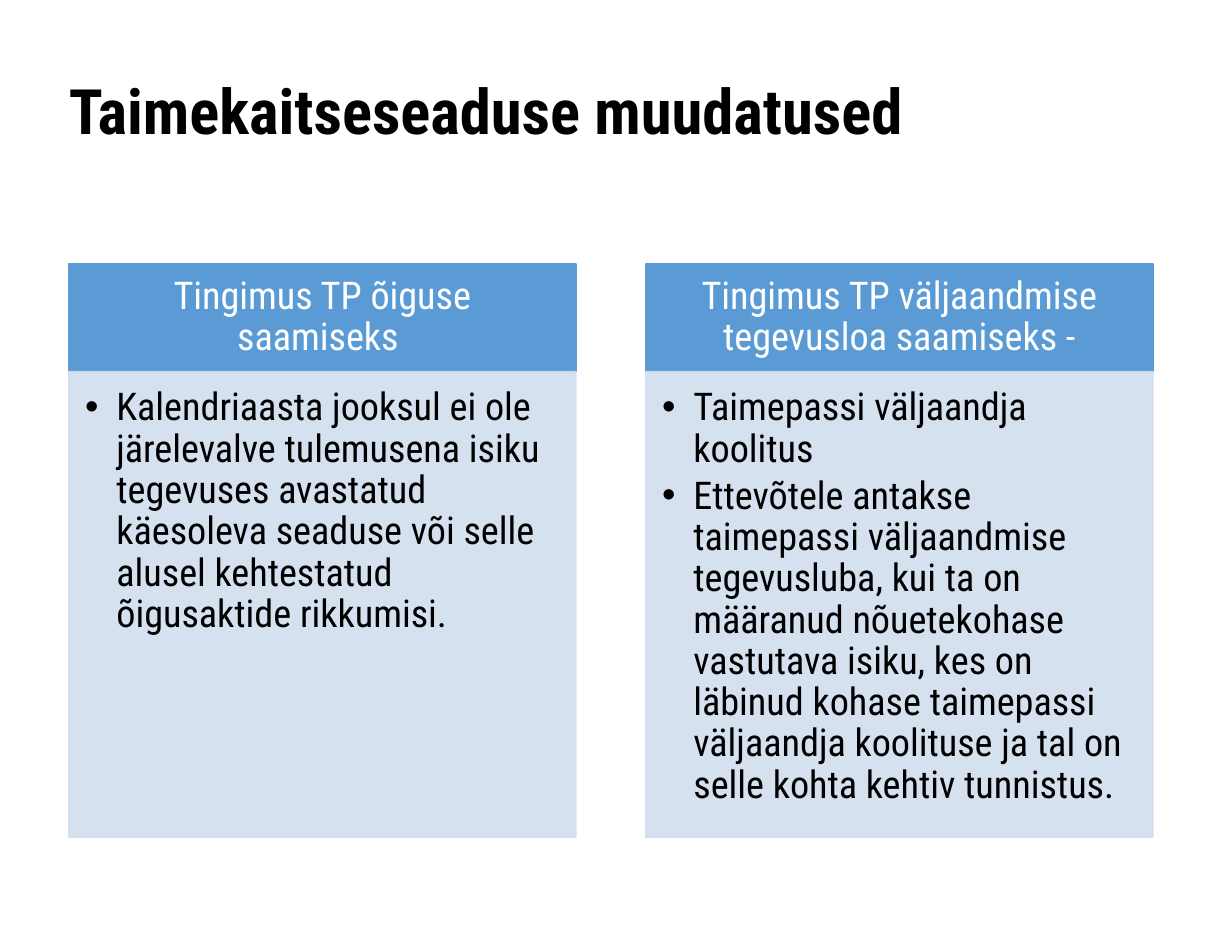
"""Builds a slide with two headed columns on plant protection law changes."""
import pptx
import pptx.util
import pptx.dml.color
import pptx.enum.shapes
import pptx.enum.text
import pptx.oxml
import pptx.oxml.ns
import lxml.etree

Inches, Pt = pptx.util.Inches, pptx.util.Pt
Align = pptx.enum.text.PP_ALIGN
Anchor = pptx.enum.text.MSO_ANCHOR
qn = pptx.oxml.ns.qn

TITLE = "Taimekaitseseaduse muudatused"
COLUMNS = [
    ("Tingimus TP õiguse saamiseks ", [
        "Kalendriaasta jooksul ei ole järelevalve tulemusena isiku tegevuses "
        "avastatud käesoleva seaduse või selle alusel kehtestatud õigusaktide "
        "rikkumisi."]),
    ("Tingimus TP väljaandmise tegevusloa saamiseks -", [
        "Taimepassi väljaandja koolitus",
        "Ettevõtele antakse taimepassi väljaandmise tegevusluba, kui ta on "
        "määranud nõuetekohase vastutava isiku, kes on läbinud kohase "
        "taimepassi väljaandja koolituse ja tal on selle kohta kehtiv "
        "tunnistus."]),
]
FONT = "Roboto Condensed"
PAGE = (25 / 2.54, 19 / 2.54)
LEFT, WIDTH, STEP = 0.55, 4.05, 4.61
HEAD = {"top": 2.11, "high": 0.86, "fill": "5B9BD5", "alpha": 100}
BODY = {"top": 2.97, "high": 3.72, "fill": "D2DEEF", "alpha": 90}
SIDES = ("margin_left", "margin_top", "margin_right", "margin_bottom")
TITLE_TEXT = {"inset": (0, 0.06, 0, 0), "anchor": Anchor.TOP,
              "para": {"alignment": Align.LEFT, "line_spacing": 0.88},
              "font": {"size": Pt(36), "bold": True}, "color": "000000"}
HEAD_TEXT = {"inset": (0.17, 0.1, 0.17, 0.1), "anchor": Anchor.MIDDLE,
             "para": {"alignment": Align.CENTER, "line_spacing": 0.9},
             "font": {"size": Pt(22)}, "color": "FFFFFF"}
BODY_TEXT = {"inset": (0.13, 0.13, 0.17, 0.19), "anchor": Anchor.TOP,
             "para": {"alignment": Align.LEFT, "line_spacing": 0.9,
                      "space_after": Pt(3.3)},
             "font": {"size": Pt(22)}, "color": "000000", "bullet": True}


def paint(color, code):
    color.rgb = pptx.dml.color.RGBColor.from_string(code)


def apply(item, values):
    for name, value in values.items():
        setattr(item, name, value)


def bullet(para):
    props = para._p.get_or_add_pPr()
    props.set("marL", str(Inches(0.25)))
    props.set("indent", str(-Inches(0.25)))
    lxml.etree.SubElement(props, qn("a:buFont")).set("typeface", "Arial")
    lxml.etree.SubElement(props, qn("a:buChar")).set("char", "•")


def write(shape, lines, style):
    frame = shape.text_frame
    apply(frame, {"word_wrap": True, "vertical_anchor": style["anchor"]})
    apply(frame, dict(zip(SIDES, map(Inches, style["inset"]))))
    frame.text = "\n".join(lines)
    for para in frame.paragraphs:
        apply(para, style["para"])
        font = para.runs[0].font
        apply(font, {"name": FONT, **style["font"]})
        paint(font.color, style["color"])
        if style.get("bullet"):
            bullet(para)


def panel(slide, left, look):
    box = slide.shapes.add_shape(
        pptx.enum.shapes.MSO_SHAPE.RECTANGLE, Inches(left),
        Inches(look["top"]), Inches(WIDTH), Inches(look["high"]))
    box.shadow.inherit = False
    box.fill.solid()
    paint(box.fill.fore_color, look["fill"])
    paint(box.line.color, look["fill"])
    box.line.width = Pt(1)
    if look["alpha"] < 100:
        for color in box._element.spPr.iter(qn("a:srgbClr")):
            alpha = lxml.etree.SubElement(color, qn("a:alpha"))
            alpha.set("val", str(look["alpha"] * 1000))
    return box


def main():
    deck = pptx.Presentation()
    deck.slide_width, deck.slide_height = map(Inches, PAGE)
    slide = deck.slides.add_slide(deck.slide_layouts[6])
    title = slide.shapes.add_textbox(
        Inches(LEFT), Inches(0.59), Inches(8.66), Inches(1.18))
    write(title, [TITLE], TITLE_TEXT)
    for order, (head, points) in enumerate(COLUMNS):
        left = LEFT + order * STEP
        write(panel(slide, left, HEAD), [head], HEAD_TEXT)
        write(panel(slide, left, BODY), points, BODY_TEXT)
    deck.save("out.pptx")


if __name__ == "__main__":
    main()
